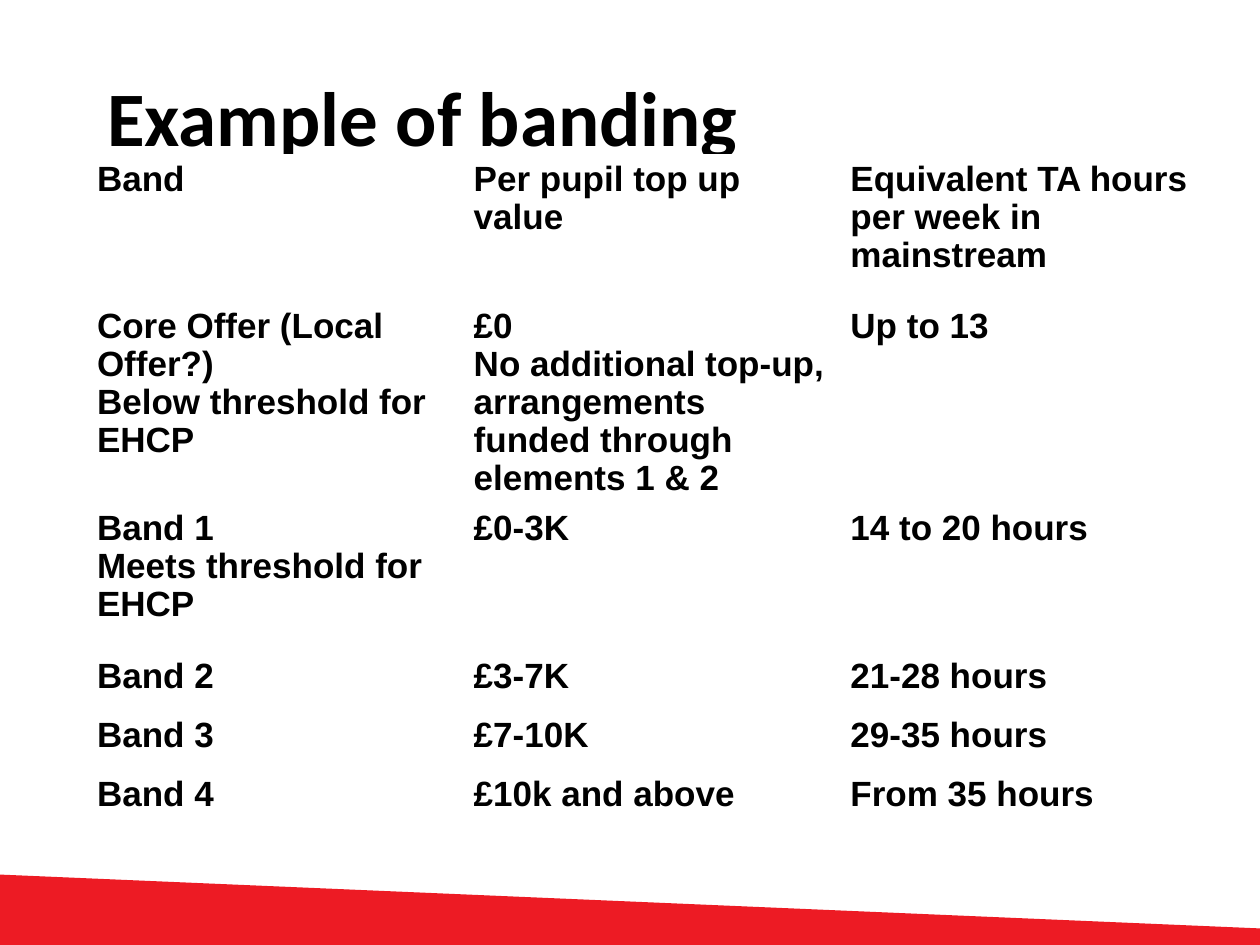
from typing import NamedTuple

from lxml.etree import SubElement as Sub
from pptx import Presentation
from pptx.dml.color import RGBColor as Rgb
from pptx.enum.text import MSO_ANCHOR as Anchor, PP_ALIGN as Align
from pptx.oxml.ns import qn
from pptx.util import Inches, Pt

COLORS = {"text": "000000", "paper": "FFFFFF", "wedge": "ED1B24"}
COL_W = 2.99


class Row(NamedTuple):
    height: float
    band: str
    value: str
    hours: str


ROWS = [
    Row(1.17, "Band", "Per pupil top up value",
        "Equivalent TA hours per week in mainstream"),
    Row(1.52, "Core Offer (Local Offer?)\nBelow threshold for EHCP",
        "£0\nNo additional top-up, arrangements funded through elements 1 & 2",
        "Up to 13"),
    Row(1.17, "Band 1\nMeets threshold for EHCP", "£0-3K", "14 to 20 hours"),
    Row(0.47, "Band 2", "£3-7K", "21-28 hours"),
    Row(0.47, "Band 3", "£7-10K", "29-35 hours"),
    Row(0.47, "Band 4", "£10k and above", "From 35 hours"),
]


def color(key: str) -> Rgb:
    return Rgb.from_string(COLORS[key])


def style(para, face: str, size: float) -> None:
    para.alignment = Align.LEFT
    for run in para.runs:
        font = run.font
        font.name, font.size, font.bold = face, Pt(size), True
        font.color.rgb = color("text")


def add_wedge(slide) -> None:
    pts = [(Inches(x), Inches(y)) for x, y in
           [(-0.02, 6.94), (-0.02, 7.51), (10.04, 7.53), (10.04, 7.37)]]
    form = slide.shapes.build_freeform(*pts[0])
    form.add_line_segments(pts[1:], close=True)
    wedge = form.convert_to_shape()
    wedge.shadow.inherit = False
    wedge.fill.solid()
    wedge.fill.fore_color.rgb = color("wedge")
    wedge.line.fill.background()


def set_title(slide, text: str) -> None:
    title = slide.shapes.title
    title.left, title.top = Inches(0.75), Inches(0.29)
    title.width, title.height = Inches(6.77), Inches(1.25)
    frame = title.text_frame
    frame.text = text
    frame.vertical_anchor = Anchor.MIDDLE
    style(frame.paragraphs[0], "Calibri", 44)


def add_edges(cell, top: float, bottom: float) -> None:
    props = cell._tc.get_or_add_tcPr()
    for side, width in (("L", 1), ("R", 1), ("T", top), ("B", bottom)):
        line = Sub(props, qn(f"a:ln{side}"), w=str(Pt(width)))
        Sub(Sub(line, qn("a:solidFill")), qn("a:srgbClr"), val=COLORS["paper"])


def fill_cell(cell, text: str, top: float, bottom: float) -> None:
    add_edges(cell, top, bottom)
    cell.fill.solid()
    cell.fill.fore_color.rgb = color("paper")
    cell.text_frame.text = text
    for para in cell.text_frame.paragraphs:
        para.line_spacing = 0.97
        style(para, "Arial", 20)


def add_bands(slide, rows: list[Row]) -> None:
    high = sum(row.height for row in rows)
    table = slide.shapes.add_table(
        len(rows), 3, Inches(0.67), Inches(1.23),
        Inches(3 * COL_W), Inches(high)).table
    for col in table.columns:
        col.width = Inches(COL_W)
    for i, row in enumerate(rows):
        table.rows[i].height = Inches(row.height)
        # The rule under the header is thicker
        top, bottom = 3 if i == 1 else 1, 3 if i == 0 else 1
        for j, text in enumerate((row.band, row.value, row.hours)):
            fill_cell(table.cell(i, j), text, top, bottom)


def main() -> None:
    deck = Presentation()
    deck.slide_width, deck.slide_height = Inches(10), Inches(7.5)
    slide = deck.slides.add_slide(deck.slide_layouts[5])
    slide.background.fill.solid()
    slide.background.fill.fore_color.rgb = color("paper")

    # Red wedge along the foot
    add_wedge(slide)
    # Heading and table of bands
    set_title(slide, "Example of banding")
    add_bands(slide, ROWS)
    deck.save("out.pptx")


if __name__ == "__main__":
    main()
